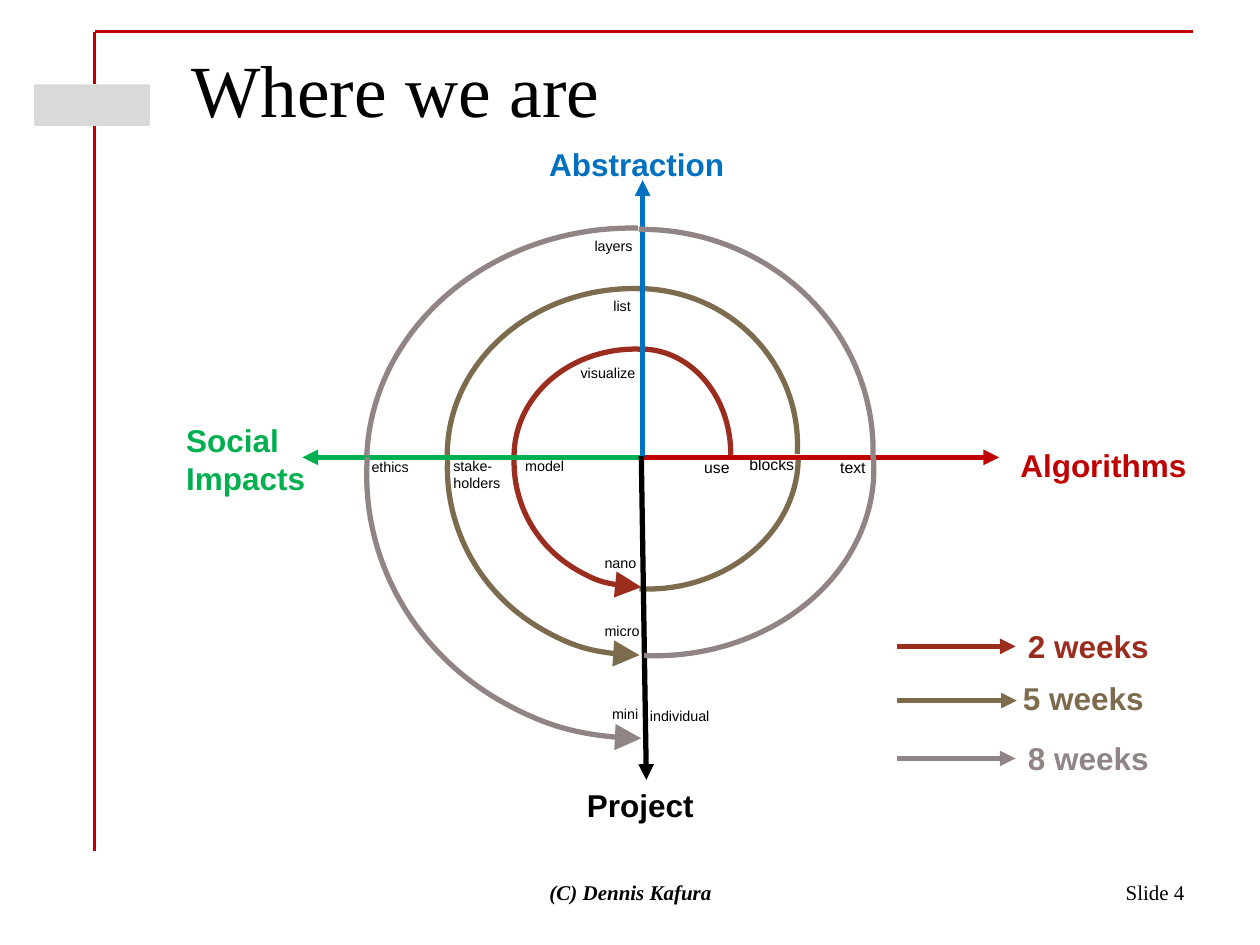
from pptx import Presentation
from pptx.dml.color import RGBColor
from pptx.enum.shapes import MSO_CONNECTOR, MSO_SHAPE
from pptx.enum.text import MSO_ANCHOR, MSO_AUTO_SIZE, PP_ALIGN
from pptx.oxml.ns import qn
from pptx.util import Inches, Pt
from lxml.etree import SubElement

COLORS = {
    "black": "000000", "red": "C00000", "blue": "0070C0", "green": "00B050",
    "nano": "9B2D1F", "micro": "7C6B4D", "mini": "918485", "plain": "D9D9D9",
}
SANS, SERIF = "Arial", "Times New Roman"


def rgb(name):
    return RGBColor.from_string(COLORS[name])


class SlideBuilder:
    """Holds the current slide and draws each kind of element."""

    def __init__(self, slide):
        self.slide = slide

    def style_line(self, shape, color, width, arrow=None, size="med"):
        shape.line.color.rgb = rgb(color)
        shape.line.width = Pt(width)
        if arrow:
            ln = shape.line._get_or_add_ln()
            SubElement(ln, qn(f"a:{arrow}"), type="triangle", w=size, len=size)

    def text(self, box, text, size, color="black", wrap=False, grow=True,
             align=PP_ALIGN.LEFT, anchor=MSO_ANCHOR.TOP, font=SANS,
             bold=False, italic=False):
        sp = self.slide.shapes.add_textbox(*map(Inches, box))
        tf = sp.text_frame
        tf.word_wrap = wrap
        tf.auto_size = MSO_AUTO_SIZE.SHAPE_TO_FIT_TEXT if grow else MSO_AUTO_SIZE.NONE
        tf.vertical_anchor = anchor
        tf.text = text
        for p in tf.paragraphs:
            p.alignment = align
            for r in p.runs:
                r.font.name, r.font.size = font, Pt(size)
                r.font.bold, r.font.italic = bold, italic
                r.font.color.rgb = rgb(color)
        return sp

    def line(self, start, end, color, width=3, arrow=None):
        cx = self.slide.shapes.add_connector(
            MSO_CONNECTOR.STRAIGHT, *map(Inches, (*start, *end)))
        self.style_line(cx, color, width, arrow)
        SubElement(cx._element.spPr, qn("a:effectLst"))
        return cx

    def block(self, box, color):
        sp = self.slide.shapes.add_shape(MSO_SHAPE.RECTANGLE, *map(Inches, box))
        sp.fill.solid()
        sp.fill.fore_color.rgb = rgb(color)
        sp.line.fill.background()
        sp.shadow.inherit = False

    def arc(self, box, color, rotation, adj, arrow=None):
        sp = self.slide.shapes.add_shape(MSO_SHAPE.ARC, *map(Inches, box))
        sp.rotation = rotation
        sp.adjustments[0], sp.adjustments[1] = adj
        sp.fill.background()
        sp.shadow.inherit = False
        self.style_line(sp, color, 3, arrow, "lg")

    def spiral(self, color, arcs, labels):
        for rotation, box, adj in arcs:
            self.arc(box, color, rotation, adj, "headEnd" if rotation == 180 else None)
        for text, size, box in labels:
            self.text(box, text, size)


QUARTER = (162, 1.974)
SMALL, MEDIUM = 8.2, 9

# Each spiral: quarter arcs (rotation, box, angles), then its labels
NANO = (
    [(0, (4.37, 2.77, 1.43, 1.66), QUARTER),
     (270, (4.19, 2.66, 1.7, 1.92), QUARTER),
     (180, (4.08, 2.68, 2.02, 1.98), QUARTER)],
    [("use", MEDIUM, (5.49, 3.58, 0.41, 0.25)),
     ("visualize", SMALL, (4.51, 2.84, 0.65, 0.24)),
     ("nano", SMALL, (4.7, 4.35, 0.46, 0.24)),
     ("model", SMALL, (4.07, 3.58, 0.52, 0.24))],
)
MICRO = (
    [(90, (4.09, 2.43, 2.09, 2.4), QUARTER),
     (0, (3.79, 2.29, 2.54, 2.48), QUARTER),
     (270, (3.71, 2.13, 2.64, 2.96), QUARTER),
     (180, (3.55, 2.22, 3.05, 2.98), QUARTER)],
    [("list", SMALL, (4.77, 2.31, 0.34, 0.24)),
     ("blocks", MEDIUM, (5.85, 3.56, 0.56, 0.25)),
     ("stake-\nholders", SMALL, (3.5, 3.58, 0.58, 0.38)),
     ("micro", SMALL, (4.7, 4.89, 0.49, 0.24))],
)
MINI = (
    [(90, (3.71, 1.98, 2.97, 3.48), (160.16, 1.97)),
     (0, (3.25, 1.82, 3.68, 3.52), (161.61, 0.98)),
     (270, (3.14, 1.58, 3.75, 4.21), (163.13, 0.92)),
     (180, (2.91, 1.68, 4.37, 4.18), (162.11, 2.23))],
    [("mini", SMALL, (4.76, 5.55, 0.42, 0.24)),
     ("layers", SMALL, (4.62, 1.83, 0.51, 0.24)),
     ("text", MEDIUM, (6.57, 3.58, 0.41, 0.25)),
     ("ethics", SMALL, (2.85, 3.59, 0.51, 0.24)),
     ("individual", SMALL, (5.06, 5.56, 0.69, 0.24))],
)
# Axis: name, colour, start, tip, label box
AXES = [
    ("Algorithms", "red", (5.1, 3.63), (7.93, 3.63), (8, 3.49, 1.6, 0.4)),
    ("Social Impacts", "green", (5.1, 3.63), (2.4, 3.63), (1.38, 3.29, 1.17, 0.71)),
    ("Abstraction", "blue", (5.1, 3.63), (5.1, 1.43), (4.26, 1.1, 1.75, 0.4)),
    ("Project", "black", (5.09, 3.62), (5.13, 6.2), (4.56, 6.19, 1.14, 0.4)),
]
# Legend: text, colour, arrow height, label left and top
LEGEND = [
    ("2 weeks", "nano", 5.13, 8.06, 4.93),
    ("5 weeks", "micro", 5.56, 8.02, 5.34),
    ("8 weeks", "mini", 6.02, 8.06, 5.82),
]


def main():
    prs = Presentation()
    prs.slide_width, prs.slide_height = Inches(10), Inches(7.5)
    s = SlideBuilder(prs.slides.add_slide(prs.slide_layouts[6]))

    # Frame lines and plain block
    s.line((0.75, 0.25), (9.47, 0.25), "red", 2)
    s.line((0.75, 0.25), (0.75, 0.67), "red", 1.75)
    s.line((0.75, 1), (0.75, 6.75), "red", 1.75)
    s.block((0.27, 0.67, 0.92, 0.33), "plain")

    # Title
    s.text((1.42, 0.31, 8.08, 0.78), "Where we are", 42, wrap=True, grow=False,
           anchor=MSO_ANCHOR.MIDDLE, font=SERIF)

    # Inner spirals, axes, outer spiral
    s.spiral("nano", *NANO)
    s.spiral("micro", *MICRO)
    for name, color, start, tip, box in AXES:
        label = s.text(box, name, 18, color, wrap=True, bold=True)
        axis = s.line(start, tip, color, arrow="tailEnd")
        if name == "Project":
            axis.end_connect(label, 0)
    s.spiral("mini", *MINI)

    # Legend
    for text, color, y, left, top in LEGEND:
        label = s.text((left, top, 1.17, 0.4), text, 18, color, bold=True)
        arrow = s.line((7.12, y), (8.07, y), color, arrow="tailEnd")
        if abs(top + 0.2 - y) < 0.01:
            arrow.end_connect(label, 1)

    # Footer
    footer = dict(wrap=True, grow=False, anchor=MSO_ANCHOR.MIDDLE, font=SERIF)
    s.text((3.42, 6.83, 3.17, 0.5), "(C) Dennis Kafura", 12,
           align=PP_ALIGN.CENTER, bold=True, italic=True, **footer)
    s.text((7.17, 6.83, 2.33, 0.5), "Slide 4", 12, align=PP_ALIGN.RIGHT, **footer)

    prs.save("out.pptx")


if __name__ == "__main__":
    main()
